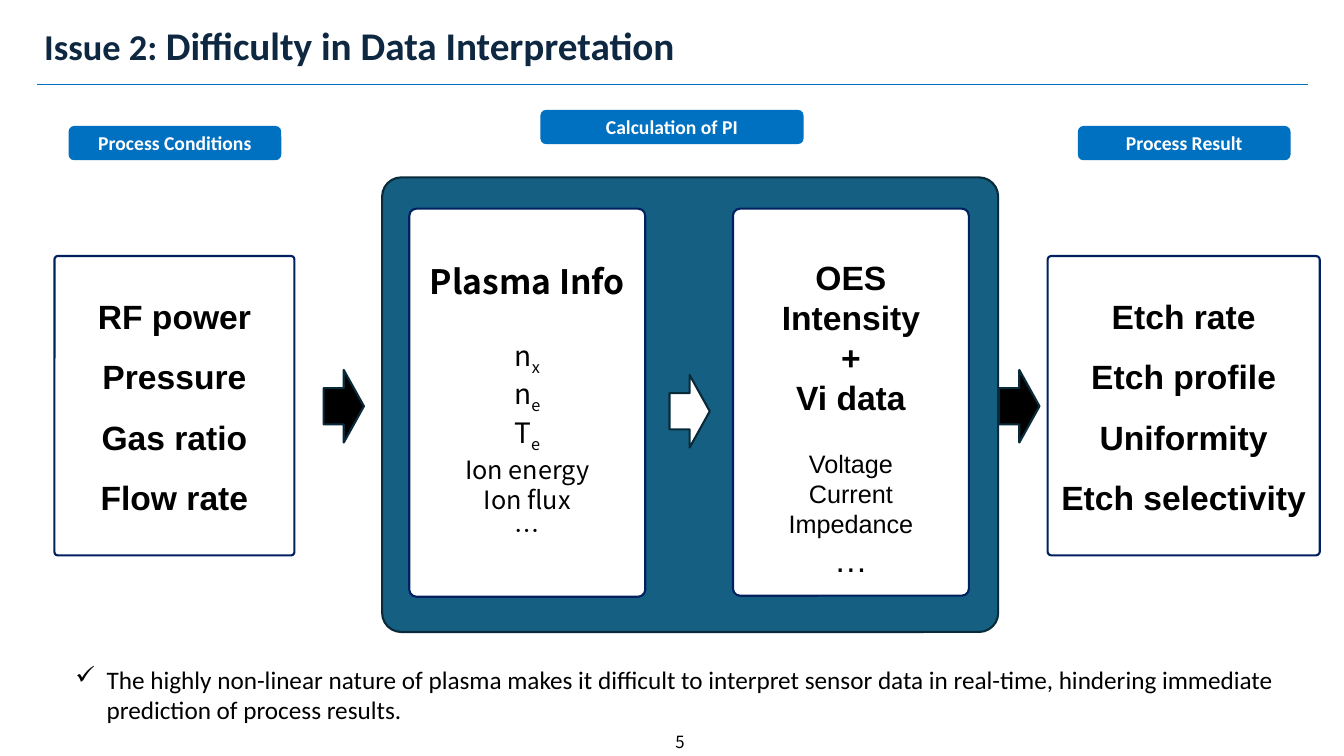
from dataclasses import dataclass
from lxml import etree
from pptx import Presentation
from pptx import util as u
from pptx.dml.color import RGBColor
from pptx.enum import shapes, text
from pptx.oxml.ns import qn

PX = 9144


@dataclass(frozen=True)
class Theme:
    blue: str = "0070C0"
    navy: str = "002060"
    teal: str = "156082"
    edge: str = "092A39"
    title: str = "0E2841"
    black: str = "000000"
    white: str = "FFFFFF"
    sans: str = "Calibri"
    arial: str = "Arial"
    noto: str = "Noto Sans CJK KR"
    page: int = 12
    label: int = 14
    body: int = 18
    symbol: int = 20
    head: int = 24
    issue: int = 26
    topic: int = 28


T = Theme()
KIND = shapes.MSO_SHAPE
MIDDLE = text.MSO_ANCHOR.MIDDLE
CENTER = text.PP_ALIGN.CENTER


def add_block(kind, box, fill=None, line=None, adj=None):
    sp = s.shapes.add_shape(kind, *(v * PX for v in box))
    sp.shadow.inherit = False
    if fill:
        sp.fill.solid()
        sp.fill.fore_color.rgb = RGBColor.from_string(fill)
    else:
        sp.fill.background()
    if line:
        sp.line.color.rgb = RGBColor.from_string(line)
        sp.line.width = u.Pt(1.5)
    else:
        sp.line.fill.background()
    if adj is not None:
        sp.adjustments[0] = adj
    return sp


def add_line(tf, runs, font, color, bold=False, align=CENTER, spacing=None, before=0):
    p = tf.paragraphs[0]
    if p.runs:
        p = tf.add_paragraph()
    p.alignment = align
    if spacing:
        p.line_spacing = spacing
    if before:
        p.space_before = u.Pt(before)
    for words, size, *baseline in runs:
        r = p.add_run()
        r.text = words
        r.font.name = font
        r.font.size = u.Pt(size)
        r.font.bold = bold
        r.font.color.rgb = RGBColor.from_string(color)
        if baseline:
            r.font._element.set("baseline", str(baseline[0]))
    return p


prs = Presentation()
prs.slide_width, prs.slide_height = 1333 * PX, 750 * PX
s = prs.slides.add_slide(prs.slide_layouts[6])

rule = s.shapes.add_connector(
    shapes.MSO_CONNECTOR.STRAIGHT, 37 * PX, 84 * PX, 1297 * PX, 84 * PX)
rule.line.color.rgb = RGBColor.from_string(T.blue)
rule.line.width = u.Pt(1)
etree.SubElement(rule._element.spPr, qn("a:effectLst"))

title, page, note = [
    s.shapes.add_textbox(*(v * PX for v in box)).text_frame
    for box in ((34, 13, 1260, 68), (525, 721, 299, 29), (65, 654, 1244, 71))]
for tf in (title, page, note):
    tf.word_wrap = True
title.vertical_anchor = page.vertical_anchor = MIDDLE

add_line(title, [("Issue 2: ", T.issue), ("Difficulty in Data Interpretation", T.topic)],
         T.sans, T.title, bold=True, align=text.PP_ALIGN.LEFT, spacing=0.9)
add_line(page, [("5", T.page)], T.noto, T.black)
p = add_line(note, [(
    "The highly non-linear nature of plasma makes it difficult to interpret sensor data "
    "in real-time, hindering immediate prediction of process results.", T.body)],
    T.sans, T.black, align=text.PP_ALIGN.LEFT)
pPr = p._p.get_or_add_pPr()
pPr.set("marL", str(31 * PX))
pPr.set("indent", str(-31 * PX))
etree.SubElement(pPr, qn("a:buChar")).set("char", "✓")

for label, box in (
        ("Process Conditions", (68, 125, 211, 34)),
        ("Calculation of PI", (536, 109, 261, 34)),
        ("Process Result", (1069, 125, 211, 34))):
    tf = add_block(KIND.ROUNDED_RECTANGLE, box, T.blue).text_frame
    tf.vertical_anchor = MIDDLE
    add_line(tf, [(label, T.label)], T.sans, T.white, bold=True)

add_block(KIND.ROUNDED_RECTANGLE, (379, 176, 611, 451), T.teal, T.edge, 0.042)

for left, width, lines in (
        (54, 238, ("RF power", "Pressure", "Gas ratio", "Flow rate")),
        (1039, 270, ("Etch rate", "Etch profile", "Uniformity", "Etch selectivity"))):
    tf = add_block(KIND.ROUNDED_RECTANGLE, (left, 254, width, 297),
                   line=T.navy, adj=0.014).text_frame
    tf.vertical_anchor = text.MSO_ANCHOR.TOP
    tf.margin_top = 19 * PX
    for words in lines:
        add_line(tf, [(words, T.head)], T.arial, T.black, bold=True, spacing=u.Pt(43))

plasma_lines = [([("Plasma Info", T.head)], True, 34.8, 0)]
plasma_lines += [([(symbol, T.symbol), (index, T.symbol, -25000)], False, 27.5, gap)
                 for symbol, index, gap in (("n", "x", 26.5), ("n", "e", 0), ("T", "e", 0))]
plasma_lines += [([(words, T.body)], False, 22, 0)
                 for words in ("Ion energy", "Ion flux", "…")]

sensor_lines = [([(words, T.head)], True, 28.7, 0)
                for words in ("OES Intensity", "+", "Vi data")]
sensor_lines += [([(words, T.body)], False, 21.5, gap)
                 for words, gap in (("Voltage", 22), ("Current", 0), ("Impedance", 0))]
sensor_lines += [([("…", T.head)], False, 28.7, 0)]

for left, height, inset, font, lines in (
        (406, 385, 41, T.noto, plasma_lines),
        (727, 384, 46, T.arial, sensor_lines)):
    tf = add_block(KIND.ROUNDED_RECTANGLE, (left, 207, 234, height),
                   T.white, T.navy, 0.03).text_frame
    tf.vertical_anchor = text.MSO_ANCHOR.TOP
    tf.margin_top = inset * PX
    for runs, bold, pitch, gap in lines:
        add_line(tf, runs, font, T.black, bold=bold, spacing=u.Pt(pitch), before=gap)

for left, top, fill in ((321, 367, T.black), (664, 372, T.white), (991, 367, T.black)):
    add_block(KIND.RIGHT_ARROW, (left, top, 40, 72), fill, T.edge)

prs.save("out.pptx")
